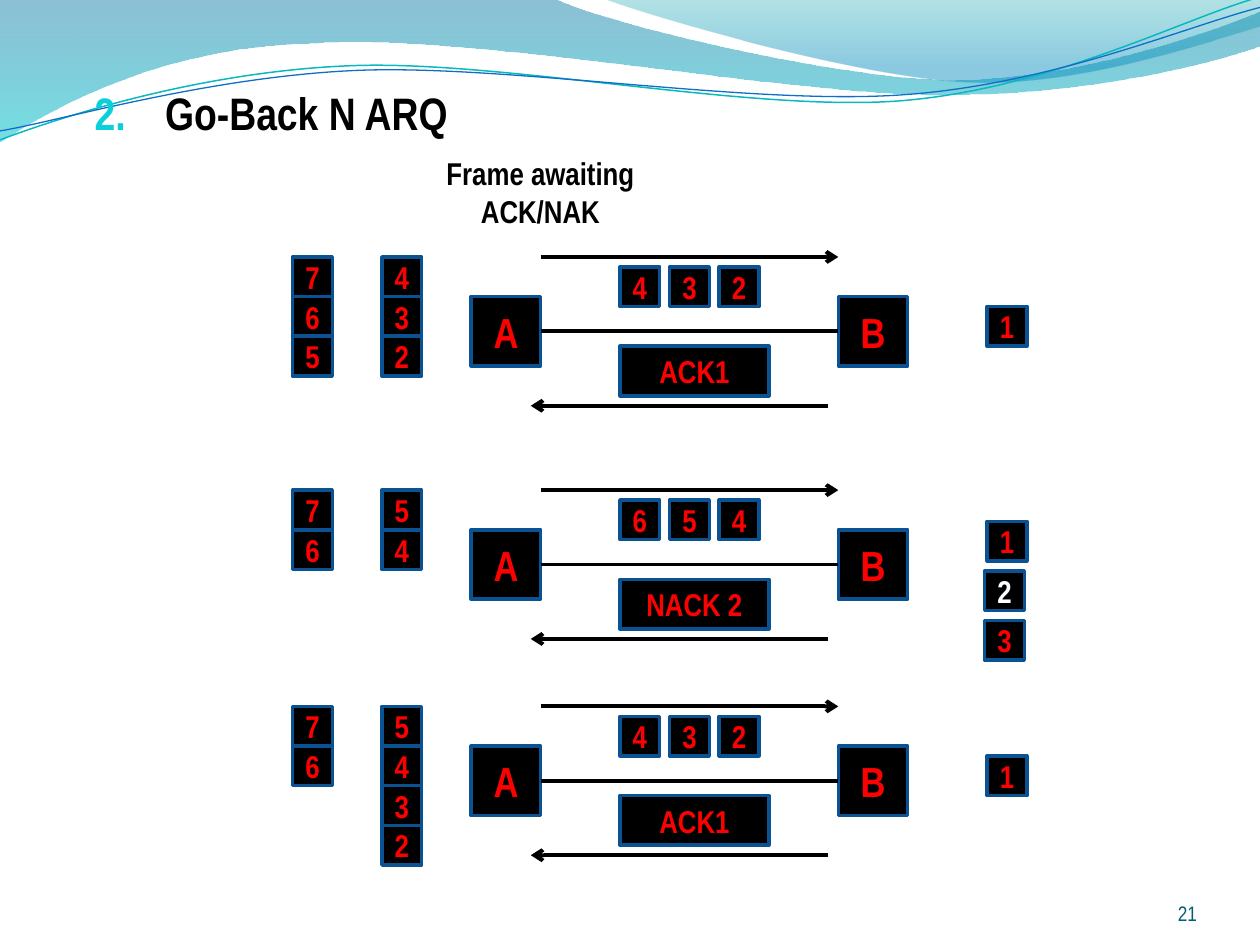
from lxml.etree import SubElement
from pptx import Presentation
from pptx.dml.color import RGBColor
from pptx.enum.shapes import MSO_CONNECTOR, MSO_SHAPE
from pptx.enum.text import MSO_ANCHOR, PP_ALIGN
from pptx.oxml.ns import qn
from pptx.util import Cm, Pt

BLACK = RGBColor(0x00, 0x00, 0x00)
WHITE = RGBColor(0xFF, 0xFF, 0xFF)
RED = RGBColor(0xFF, 0x00, 0x00)
BOX_EDGE = RGBColor(0x0B, 0x52, 0x92)
PAGE_TEAL = RGBColor(0x04, 0x5D, 0x75)
NUMBER_CYAN = RGBColor(0x0B, 0xD0, 0xD9)
WAVE_BLUE = RGBColor(0x00, 0x74, 0xA1)
WAVE_CYAN = RGBColor(0x00, 0xC6, 0xCF)
CREST_TEAL = RGBColor(0x00, 0xA1, 0xA9)
CREST_BLUE = RGBColor(0x00, 0x8B, 0xBF)
STRAND_TEAL = RGBColor(0x0A, 0xB8, 0xBF)
STRAND_BLUE = RGBColor(0x0F, 0x6F, 0xC6)

# Content: one dict per exchange between stations A and B
TITLE = "Go-Back N ARQ"
CAPTION = ["Frame awaiting", "ACK/NAK"]
PAGE = "21"
EXCHANGES = [
    {"top": 5.18, "queued": "765", "awaiting": "432", "in_transit": "432",
     "reply": "ACK1", "received": "1", "received_drop": 1, "held": ""},
    {"top": 9.88, "queued": "76", "awaiting": "54", "in_transit": "654",
     "reply": "NACK 2", "received": "1", "received_drop": 0.63, "held": "23"},
    {"top": 14.24, "queued": "76", "awaiting": "5432", "in_transit": "432",
     "reply": "ACK1", "received": "1", "received_drop": 1, "held": ""},
]
LOST_FRAME = "2"

# Header outlines in cm: a pair is a line end, six numbers are a Bezier curve
WAVES = [
    ([(0, 0), (11.18, -0.03), (12.09, 0.43, 16.87, 1.6, 19.25, 1.6),
      (21.67, 1.6, 24.33, 0.66, 25.4, 0.23), (25.43, 0.91),
      (24.97, 1.12, 22.1, 1.93, 18.95, 1.91),
      (15.8, 1.91, 9.7, 0.71, 6.53, 0.86),
      (3.28, 0.91, 1.17, 2.11, -0.03, 2.87)],
     [(0, WAVE_BLUE, 45), (1, WAVE_CYAN, 55)]),
    ([(12.17, -0.03), (12.93, 0.28, 17.32, 1.57, 19.53, 1.65),
      (21.74, 1.75, 24.41, 0.81, 25.4, 0.53), (25.4, 0)],
     [(0, CREST_TEAL, 30), (0.8, CREST_BLUE, 45)]),
]
STRANDS = [
    ([(-0.05, 2.22), (1.19, 1.82, 4.02, 1.04, 7.05, 1.06),
      (10.05, 1.07, 15.02, 2.37, 18.08, 2.29),
      (21.13, 2.2, 23.87, 0.91, 25.41, 0.55)], STRAND_TEAL, 0.85),
    ([(-0.04, 2.04), (1.16, 1.9, 4.18, 1.15, 7.2, 1.16),
      (10.25, 1.18, 15.13, 2.25, 18.18, 2.17),
      (21.21, 2.1, 23.93, 1.06, 25.45, 0.75)], STRAND_BLUE, 0.75),
]
STRAND_TILT = 357.3

# Layout in cm
QUEUED_X, AWAITING_X, A_X, TRANSIT_X, B_X = 5.9, 7.7, 9.5, 12.5, 16.9
RECEIVED_X, HELD_X = 19.9, 19.85
FRAME, STACK_STEP, SPACED_STEP, STATION = 0.8, 0.8, 1, 1.4
NO_INSETS = {"margin_left": 0, "margin_right": 0, "margin_top": 0, "margin_bottom": 0}

prs = Presentation()
prs.slide_width, prs.slide_height = Cm(25.4), Cm(19.05)
slide = prs.slides.add_slide(prs.slide_layouts[6])
shapes = slide.shapes


def apply(target, values):
    for key, value in values.items():
        setattr(target, key, value)


def write(frame, lines, size, color, bold=True, align=PP_ALIGN.CENTER, **frame_format):
    apply(frame, frame_format)
    for i, line in enumerate(lines):
        paragraph = frame.paragraphs[0] if i == 0 else frame.add_paragraph()
        paragraph.alignment = align
        run = paragraph.add_run()
        run.text = line
        apply(run.font, {"name": "Arial Narrow", "size": Pt(size), "bold": bold})
        run.font.color.rgb = color


def add_text(x, y, width, height, lines, size, color, **text_format):
    label = shapes.add_textbox(Cm(x), Cm(y), Cm(width), Cm(height))
    write(label.text_frame, lines, size, color, **text_format)
    return label


def add_box(x, y, width, height, text, size=18, color=RED):
    box = shapes.add_shape(MSO_SHAPE.RECTANGLE, Cm(x), Cm(y), Cm(width), Cm(height))
    box.shadow.inherit = False
    box.fill.solid()
    box.fill.fore_color.rgb = BLACK
    box.line.color.rgb = BOX_EDGE
    box.line.width = Pt(2)
    write(box.text_frame, [text], size, color, word_wrap=True,
          vertical_anchor=MSO_ANCHOR.MIDDLE, **NO_INSETS)


def add_frames(x, y, numbers, dx=0, dy=0, lost=""):
    for i, number in enumerate(numbers):
        add_box(x + i * dx, y + i * dy, FRAME, FRAME, number,
                color=WHITE if number == lost else RED)


def add_link(x1, x2, y, arrow=True):
    link = shapes.add_connector(MSO_CONNECTOR.STRAIGHT, Cm(x1), Cm(y), Cm(x2), Cm(y))
    link.line.color.rgb = BLACK
    link.line.width = Pt(2.25)
    if arrow:
        SubElement(link.line._get_or_add_ln(), qn("a:tailEnd"), type="arrow")
    SubElement(link._element.spPr, qn("a:effectLst"))


def add_outline(outline, close):
    start, *ends = [(Cm(part[-2]), Cm(part[-1])) for part in outline]
    builder = shapes.build_freeform(*start)
    builder.add_line_segments(ends, close=close)
    curve = builder.convert_to_shape()
    curve.shadow.inherit = False
    # Bend the straight segments that have control points
    segments = list(curve._element.spPr.iter(qn("a:lnTo")))
    for segment, part in zip(segments, outline[1:]):
        if len(part) == 6:
            segment.tag = qn("a:cubicBezTo")
            end = segment[0]
            for x, y in (part[:2], part[2:4]):
                end.addprevious(end.makeelement(qn("a:pt"), {
                    "x": str(Cm(x) - curve.left), "y": str(Cm(y) - curve.top)}))
    return curve


# Header waves and strands
for outline, stops in WAVES:
    wave = add_outline(outline, True)
    wave.line.fill.background()
    wave.fill.gradient()
    wave.fill.gradient_angle = 270
    for stop, (position, color, _) in zip(wave.fill.gradient_stops, stops):
        stop.position = position
        stop.color.rgb = color
    for node, (_, _, opacity) in zip(wave._element.spPr.iter(qn("a:srgbClr")), stops):
        SubElement(node, qn("a:alpha"), val=str(opacity * 1000))
for outline, color, width in STRANDS:
    strand = add_outline(outline, False)
    strand.rotation = STRAND_TILT
    strand.fill.background()
    strand.line.color.rgb = color
    strand.line.width = Pt(width)

# Numbered title, caption and page number
title = add_text(1.28, 1.59, 22.86, 1.68, [TITLE], 26, BLACK,
                 align=PP_ALIGN.LEFT, word_wrap=True)
heading = title.text_frame.paragraphs[0]
heading.space_before = Pt(5.2)
heading_format = heading._p.get_or_add_pPr()
heading_format.set("marL", str(Cm(1.8)))
heading_format.set("indent", str(Cm(-1.42)))
SubElement(SubElement(heading_format, qn("a:buClr")), qn("a:srgbClr"), val=str(NUMBER_CYAN))
SubElement(heading_format, qn("a:buFont"), typeface="+mj-lt")
SubElement(heading_format, qn("a:buAutoNum"), type="arabicPeriod", startAt="2")
add_text(8.1, 2.98, 5.59, 1.8, CAPTION, 18, BLACK, word_wrap=False)
add_text(22.02, 17.65, 2.11, 1.02, [PAGE], 12, PAGE_TEAL, bold=False, align=PP_ALIGN.RIGHT,
         word_wrap=True, vertical_anchor=MSO_ANCHOR.BOTTOM, **NO_INSETS)

# Exchanges
for exchange in EXCHANGES:
    top = exchange["top"]
    received_top = top + exchange["received_drop"]
    add_frames(QUEUED_X, top, exchange["queued"], dy=STACK_STEP)
    add_frames(AWAITING_X, top, exchange["awaiting"], dy=STACK_STEP)
    add_frames(TRANSIT_X, top + 0.2, exchange["in_transit"], dx=SPACED_STEP)
    add_frames(RECEIVED_X, received_top, exchange["received"])
    add_frames(HELD_X, received_top + SPACED_STEP, exchange["held"],
               dy=SPACED_STEP, lost=LOST_FRAME)
    for x, station in ((A_X, "A"), (B_X, "B")):
        add_box(x, top + 0.8, STATION, STATION, station, size=24)
    add_box(TRANSIT_X, top + 1.8, 3, 1, exchange["reply"])
    add_link(A_X + STATION, B_X, top)
    add_link(A_X + STATION, B_X, top + 1.5, arrow=False)
    add_link(B_X - 0.2, A_X + STATION - 0.2, top + 3)

prs.save("out.pptx")
